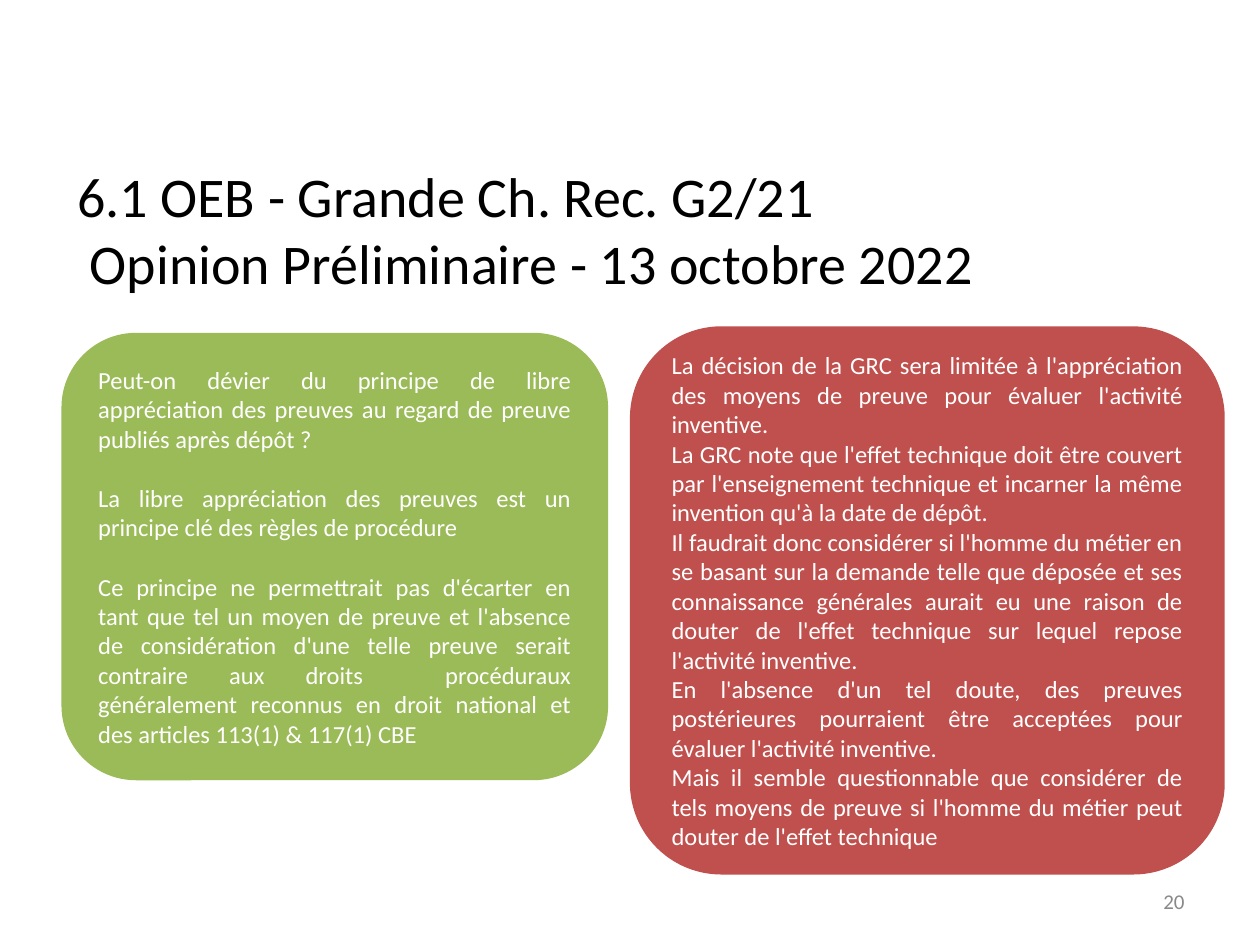
from pptx import Presentation
from pptx.dml.color import RGBColor
from pptx.enum.shapes import MSO_SHAPE
from pptx.enum.text import MSO_ANCHOR, MSO_AUTO_SIZE, PP_ALIGN
from pptx.util import Cm, Pt

ROUND = MSO_SHAPE.ROUNDED_RECTANGLE
TOP, MID = MSO_ANCHOR.TOP, MSO_ANCHOR.MIDDLE
LEFT, RIGHT, JUST = PP_ALIGN.LEFT, PP_ALIGN.RIGHT, PP_ALIGN.JUSTIFY
FIXED = MSO_AUTO_SIZE.NONE

TITLE = "6.1 OEB - Grande Ch. Rec. G2/21\v Opinion Préliminaire - 13 octobre 2022"
ISSUE = [
    "Peut-on dévier du principe de libre appréciation des preuves au regard de "
    "preuve publiés après dépôt ?",
    "La libre appréciation des preuves est un principe clé des règles de procédure",
    "Ce principe ne permettrait pas d'écarter en tant que tel un moyen de preuve et "
    "l'absence de considération d'une telle preuve serait contraire aux droits  "
    "procéduraux généralement reconnus en droit national et des articles 113(1) & "
    "117(1) CBE",
]
VIEW = [
    "La décision de la GRC sera limitée à l'appréciation des moyens de preuve pour "
    "évaluer l'activité inventive.",
    "La GRC note que l'effet technique doit être couvert par l'enseignement technique "
    "et incarner la même invention qu'à la date de dépôt.",
    "Il faudrait donc considérer si l'homme du métier en se basant sur la demande "
    "telle que déposée et ses connaissance générales aurait eu une raison de douter "
    "de l'effet technique sur lequel repose l'activité inventive.",
    "En l'absence d'un tel doute, des preuves postérieures pourraient être acceptées "
    "pour évaluer l'activité inventive.",
    "Mais il semble questionnable que considérer de tels moyens de preuve si l'homme "
    "du métier peut douter de l'effet technique",
]


def color(code):
    return RGBColor.from_string(code)


def write(frame, paras, size, ink, font, align=LEFT, anchor=TOP, gap=0):
    """Fill a text frame, with gap points between its paragraphs."""
    frame.word_wrap = True
    frame.auto_size = FIXED
    frame.vertical_anchor = anchor
    for i, text in enumerate(paras):
        para = frame.paragraphs[0] if i == 0 else frame.add_paragraph()
        para.text = text
        para.alignment = align
        para.space_before = Pt(gap if i else 0)
        para.font.size = Pt(size)
        para.font.name = font
        para.font.color.rgb = color(ink)


class Page:
    font = "Calibri"
    black, white, grey = "000000", "FFFFFF", "898989"
    green, red = "9BBB59", "C0504D"

    def __init__(self, deck):
        self.slide = deck.slides.add_slide(deck.slide_layouts[5])

    def title(self, text, x, y, w, h):
        box = self.slide.shapes.title
        box.left, box.top, box.width, box.height = Cm(x), Cm(y), Cm(w), Cm(h)
        write(box.text_frame, [text], 32, self.black, self.font)

    def card(self, paras, x, y, w, h, fill, gap=0):
        box = self.slide.shapes.add_shape(ROUND, Cm(x), Cm(y), Cm(w), Cm(h))
        box.shadow.inherit = False
        box.fill.solid()
        box.fill.fore_color.rgb = color(fill)
        box.line.fill.background()
        frame = box.text_frame
        frame.margin_left = frame.margin_right = Cm(0.3)
        frame.margin_top = frame.margin_bottom = Cm(0.2)
        write(frame, paras, 14, self.white, self.font, JUST, MID, gap)

    def number(self, text, x, y, w, h):
        box = self.slide.shapes.add_textbox(Cm(x), Cm(y), Cm(w), Cm(h))
        write(box.text_frame, [text], 12, self.grey, self.font, RIGHT, MID)


def main():
    deck = Presentation()
    deck.slide_width, deck.slide_height = Cm(25.4), Cm(19.05)
    page = Page(deck)

    # Heading
    page.title(TITLE, 1.3, 3.12, 22.86, 12.57)

    # Question on the left, preliminary opinion on the right
    page.card(ISSUE, 1.24, 6.71, 11.02, 9.02, page.green, gap=17)
    page.card(VIEW, 12.7, 6.58, 11.99, 11.05, page.red)

    # Page number
    page.number("20", 18.21, 17.65, 5.92, 1.02)

    deck.save("out.pptx")


if __name__ == "__main__":
    main()
